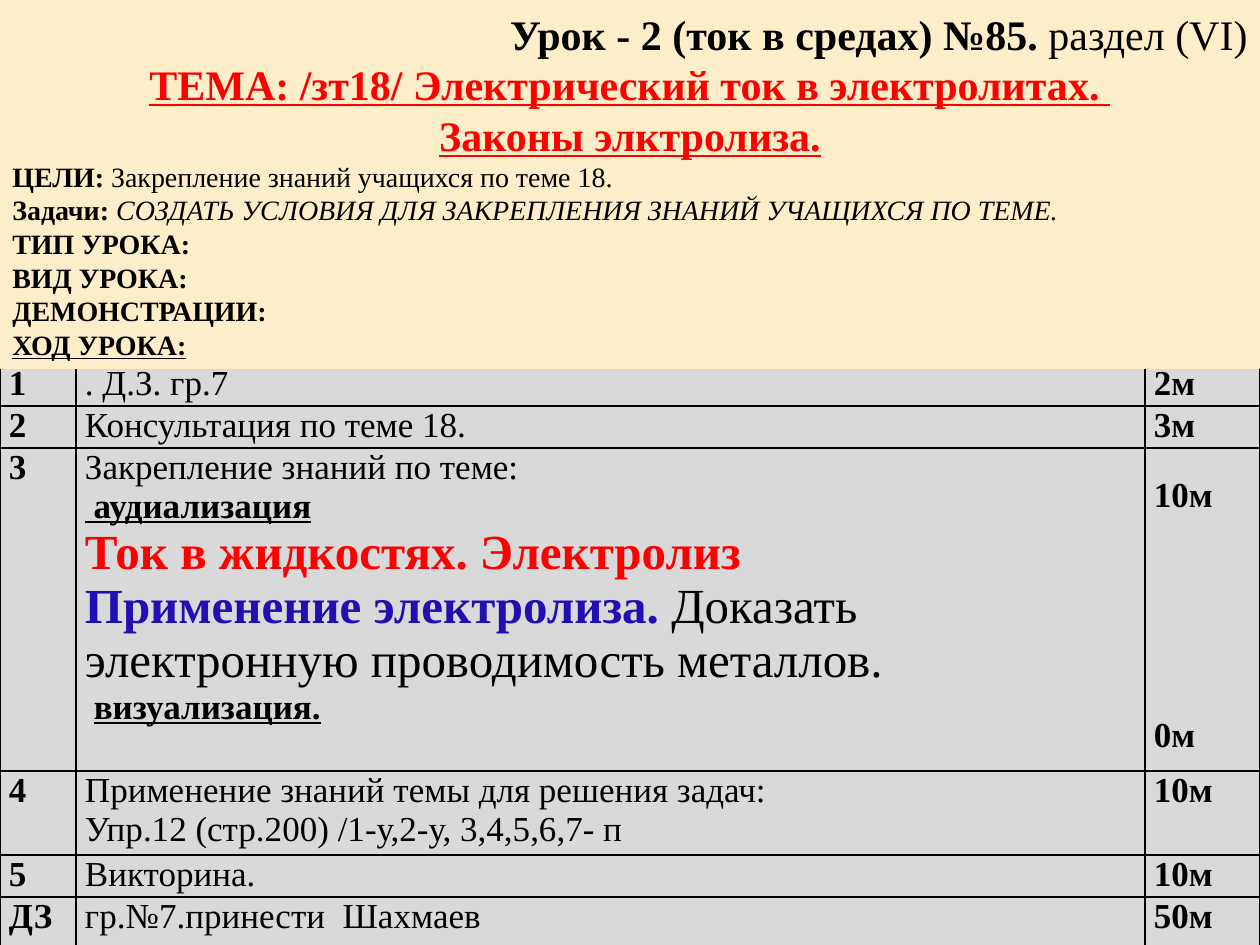
from lxml import etree
from pptx import Presentation
from pptx.dml.color import RGBColor
from pptx.enum.shapes import MSO_SHAPE
from pptx.enum.text import MSO_ANCHOR, MSO_AUTO_SIZE, PP_ALIGN
from pptx.oxml.ns import qn
from pptx.util import Emu, Pt

RECT = MSO_SHAPE.RECTANGLE
MIDDLE = MSO_ANCHOR.MIDDLE
GROW = MSO_AUTO_SIZE.SHAPE_TO_FIT_TEXT
LEFT, CENTER, RIGHT = PP_ALIGN.LEFT, PP_ALIGN.CENTER, PP_ALIGN.RIGHT

THEME = {
    "font": "Times New Roman",
    "black": "000000", "red": "FF0000", "blue": "220FB1",
    "cream": "FBEEC9", "grey": "D9D9D9",
    "title": 24, "goal": 16, "cell": 20, "topic": 28, "border": 1,
}


def px(n):
    return Emu(round(n * 914400 / 126))


def add_runs(p, runs, align=LEFT):
    p.alignment = align
    for text, size, style, color in runs:
        r = p.add_run()
        r.text = text
        r.font.name = THEME["font"]
        r.font.size = Pt(THEME[size])
        r.font.bold = "b" in style
        r.font.italic = "i" in style
        r.font.underline = "u" in style
        r.font.color.rgb = RGBColor.from_string(THEME[color])


prs = Presentation()
prs.slide_width, prs.slide_height = px(1260), px(945)
s = prs.slides.add_slide(prs.slide_layouts[6])

plan = [
    ("1", [[(". Д.З. гр.7", "cell", "", "black")]], ["2м"]),
    ("2", [[("Консультация по теме 18.", "cell", "", "black")]], ["3м"]),
    ("3", [
        [("Закрепление знаний по теме:", "cell", "", "black")],
        [(" аудиализация", "cell", "bu", "black")],
        [("Ток в жидкостях. Электролиз", "topic", "b", "red")],
        [("Применение электролиза. ", "topic", "b", "blue"),
         ("Доказать электронную проводимость металлов.", "topic", "", "black")],
        [(" ", "cell", "", "black"), ("визуализация.", "cell", "bu", "black")],
    ], ["10м", "0м"]),
    ("4", [
        [("Применение знаний темы для решения задач:", "cell", "", "black")],
        [("Упр.12 (стр.200) /1-у,2-у, 3,4,5,6,7- п", "cell", "", "black")],
    ], ["10м"]),
    ("5", [[("Викторина.", "cell", "", "black")]], ["10м"]),
    ("ДЗ", [[("гр.№7.принести  Шахмаев", "cell", "", "black")]], ["50м"]),
]
col_widths = [76, 1069, 115]
row_heights = [42, 42, 323, 84, 42, 81]

table = s.shapes.add_table(len(plan), len(col_widths), px(0), px(364),
                           px(sum(col_widths)), px(sum(row_heights))).table
table.first_row = False
table.horz_banding = False
for col, width in zip(table.columns, col_widths):
    col.width = px(width)
for row, height in zip(table.rows, row_heights):
    row.height = px(height)

for i, (number, activity, times) in enumerate(plan):
    columns = [
        [[(number, "cell", "b", "black")]],
        activity,
        [[(time, "cell", "b", "black")] for time in times],
    ]
    for j, paragraphs in enumerate(columns):
        cell = table.cell(i, j)
        cell.margin_left = cell.margin_right = px(9)
        cell.margin_top = cell.margin_bottom = px(0)
        tc_pr = cell._tc.get_or_add_tcPr()
        for side in ("a:lnL", "a:lnR", "a:lnT", "a:lnB"):
            ln = etree.SubElement(tc_pr, qn(side), w=str(Pt(THEME["border"])))
            fill = etree.SubElement(ln, qn("a:solidFill"))
            etree.SubElement(fill, qn("a:srgbClr"), val=THEME["black"])
        cell.fill.solid()
        cell.fill.fore_color.rgb = RGBColor.from_string(THEME["grey"])
        tf = cell.text_frame
        for k, runs in enumerate(paragraphs):
            p = tf.add_paragraph() if k else tf.paragraphs[0]
            add_runs(p, runs)

two_times = table.cell(2, 2)
two_times.margin_top = px(28)
two_times.text_frame.paragraphs[1].space_before = Pt(115)

header = [
    (RIGHT, [("Урок - 2 (ток в средах) №85. ", "title", "b", "black"),
             ("раздел (VI)", "title", "", "black")]),
    (CENTER, [("ТЕМА: /зт18/ Электрический ток в электролитах. ", "title", "bu", "red")]),
    (CENTER, [("Законы элктролиза.", "title", "bu", "red")]),
    (LEFT, [("ЦЕЛИ:", "goal", "b", "black"),
            (" Закрепление знаний учащихся по теме 18.", "goal", "", "black")]),
    (LEFT, [("Задачи: ", "goal", "b", "black"),
            ("СОЗДАТЬ УСЛОВИЯ ДЛЯ ЗАКРЕПЛЕНИЯ ЗНАНИЙ УЧАЩИХСЯ ПО ТЕМЕ.",
             "goal", "i", "black")]),
    (LEFT, [("ТИП УРОКА:", "goal", "b", "black")]),
    (LEFT, [("ВИД УРОКА:", "goal", "b", "black")]),
    (LEFT, [("ДЕМОНСТРАЦИИ:", "goal", "b", "black")]),
    (LEFT, [("ХОД УРОКА:", "goal", "bu", "black")]),
]
sp = s.shapes.add_shape(RECT, px(0), px(0), px(1260), px(369))
sp.shadow.inherit = False
sp.fill.solid()
sp.fill.fore_color.rgb = RGBColor.from_string(THEME["cream"])
sp.line.fill.background()
tf = sp.text_frame
tf.word_wrap = True
tf.auto_size = GROW
tf.vertical_anchor = MIDDLE
for k, (align, runs) in enumerate(header):
    p = tf.add_paragraph() if k else tf.paragraphs[0]
    add_runs(p, runs, align)

prs.save("out.pptx")
